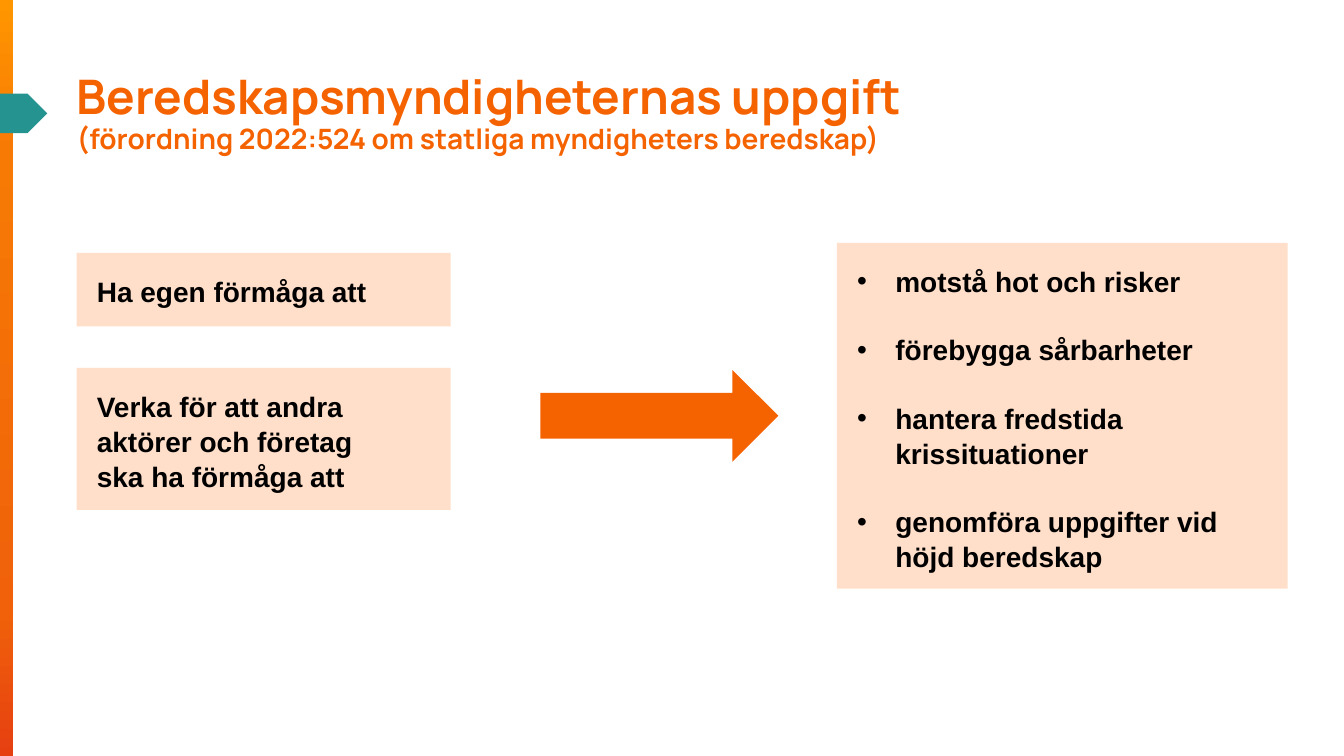
"""Builds the slide on the task of Swedish preparedness authorities."""
from copy import deepcopy

from lxml import etree
from pptx import Presentation, util as u
from pptx.dml.color import RGBColor
from pptx.enum import shapes, text
from pptx.oxml.ns import qn

HEADING = (("Beredskapsmyndigheternas uppgift", 34),
           ("(förordning 2022:524 om statliga myndigheters beredskap)", 20))
DUTIES = (("Ha egen förmåga att", 2.51, 0.73),
          ("Verka för att andra aktörer och företag \vska ha förmåga att", 3.65, 1.41))
ABILITIES = ("motstå hot och risker", "förebygga sårbarheter",
             "hantera fredstida krissituationer",
             "genomföra uppgifter vid höjd beredskap")

COLORS = {"orange": "F56200", "peach": "FFDFCA", "teal": "259490", "ink": "000000"}
BAR_STOPS = ((0, "FF9600"), (0.2, "F77A05"), (0.81, "F0610A"), (1, "E64011"))
WIDTH, HEIGHT = 13.33, 7.5
LEFT, RIGHT = 0.76, 12.77
DUTY_WIDTH, ABILITY_WIDTH = 3.71, 4.47
INSET, INDENT = 0.2, 0.38


def rgb(name):
    return RGBColor.from_string(COLORS[name])


def apply(target, values):
    for name, value in values.items():
        setattr(target, name, value)


def place(part, *box):
    apply(part, dict(zip(("left", "top", "width", "height"), map(u.Inches, box))))


def paint(part, color):
    part.fill.solid()
    part.fill.fore_color.rgb = rgb(color)


def add_block(slide, kind, box, color):
    block = slide.shapes.add_shape(kind, *map(u.Inches, box))
    block.shadow.inherit = False
    block.line.fill.background()
    paint(block, color)
    return block


def set_frame(frame, inset, anchor):
    margins = {f"margin_{side}": u.Inches(inset) for side in ("left", "right", "top", "bottom")}
    apply(frame, {"word_wrap": True, "auto_size": text.MSO_AUTO_SIZE.NONE,
                  "vertical_anchor": anchor, **margins})


def set_font(font, name, size, color):
    apply(font, {"name": name, "size": u.Pt(size), "bold": True})
    font.color.rgb = rgb(color)


def write_lines(frame, lines, gap=0, bulleted=False):
    set_frame(frame, INSET, text.MSO_ANCHOR.TOP)
    for i, line in enumerate(lines):
        item = frame.add_paragraph() if i else frame.paragraphs[0]
        item.text = line
        apply(item, {"alignment": text.PP_ALIGN.LEFT, "line_spacing": 1.04,
                     "space_before": u.Pt(gap if i else 0)})
        if bulleted:
            props = item._p.get_or_add_pPr()
            props.set("marL", str(u.Inches(INDENT)))
            props.set("indent", str(-u.Inches(INDENT)))
            etree.SubElement(props, qn("a:buFont"), typeface="Arial")
            etree.SubElement(props, qn("a:buChar"), char="•")
        for run in item.runs:
            set_font(run.font, "Arial", 20, "ink")


def add_side_bar(slide):
    bar = add_block(slide, shapes.MSO_SHAPE.RECTANGLE, (0, 0, 0.13, HEIGHT), "orange")
    bar.fill.gradient()
    bar.fill.gradient_angle = 270
    stop_list = bar._element.spPr.find(".//" + qn("a:gsLst"))
    while len(stop_list) < len(BAR_STOPS):
        stop_list.append(deepcopy(stop_list[0]))
    for stop, (position, color) in zip(bar.fill.gradient_stops, BAR_STOPS):
        stop.position = position
        stop.color.rgb = RGBColor.from_string(color)


def add_heading(slide):
    heading = slide.shapes.title
    place(heading, LEFT, 0.59, RIGHT - LEFT, 1.09)
    set_frame(heading.text_frame, 0, text.MSO_ANCHOR.MIDDLE)
    line = heading.text_frame.paragraphs[0]
    apply(line, {"alignment": text.PP_ALIGN.LEFT, "line_spacing": 0.9})
    for i, (words, size) in enumerate(HEADING):
        if i:
            line.add_line_break()
        run = line.add_run()
        run.text = words
        set_font(run.font, "Manrope", size, "orange")


def main():
    deck = Presentation()
    apply(deck, {"slide_width": u.Inches(WIDTH), "slide_height": u.Inches(HEIGHT)})
    slide = deck.slides.add_slide(deck.slide_layouts[1])
    add_side_bar(slide)
    add_block(slide, shapes.MSO_SHAPE.PENTAGON, (0, 0.93, 0.47, 0.39), "teal")
    add_heading(slide)

    abilities = slide.placeholders[1]
    place(abilities, RIGHT - ABILITY_WIDTH, 2.41, ABILITY_WIDTH, 3.43)
    paint(abilities, "peach")
    write_lines(abilities.text_frame, ABILITIES, gap=24, bulleted=True)

    add_block(slide, shapes.MSO_SHAPE.RIGHT_ARROW, (5.36, 3.67, 2.36, 0.91), "orange")
    for words, top, height in DUTIES:
        duty = add_block(slide, shapes.MSO_SHAPE.RECTANGLE,
                         (LEFT, top, DUTY_WIDTH, height), "peach")
        write_lines(duty.text_frame, [words])
    deck.save("out.pptx")


if __name__ == "__main__":
    main()
